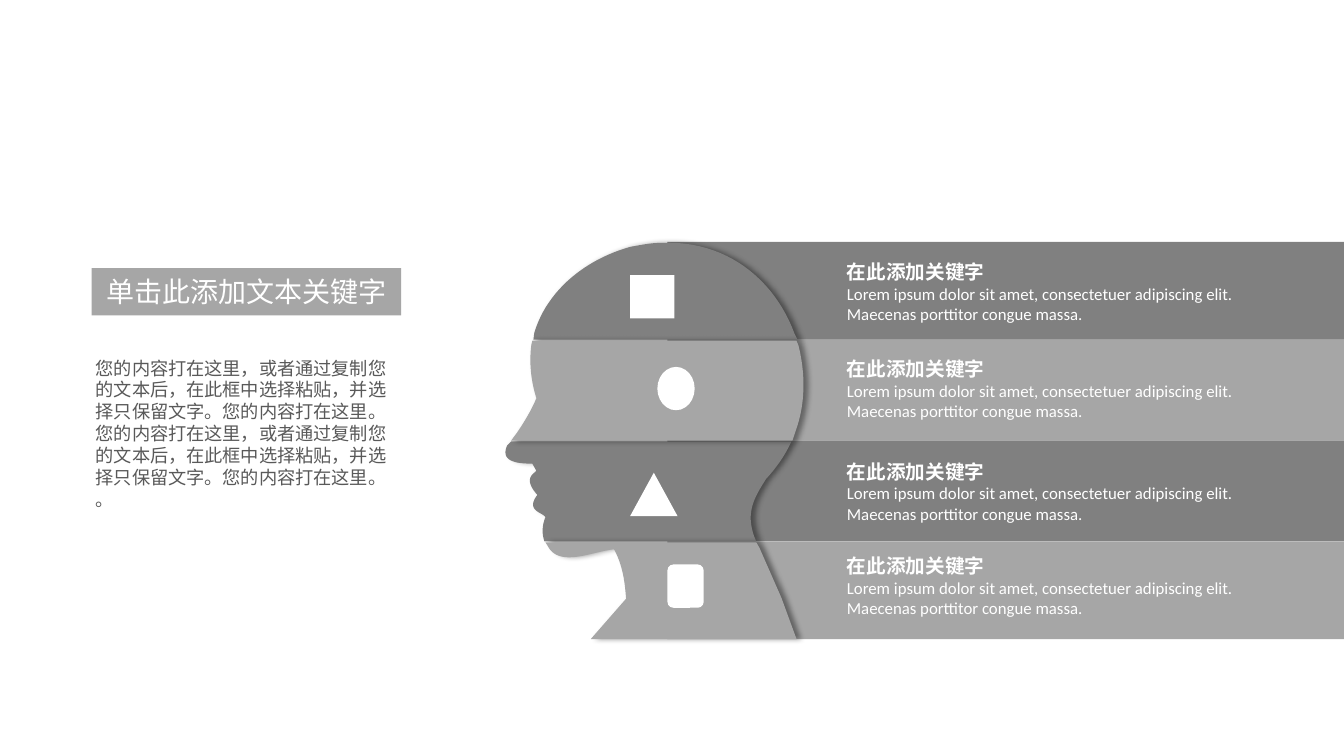
from dataclasses import dataclass

from lxml import etree
from pptx import Presentation
from pptx import util as u
from pptx.dml.color import RGBColor
from pptx.enum import shapes, text
from pptx.oxml import ns
from pptx.shapes.autoshape import Shape
from pptx.shapes.shapetree import SlideShapes
from pptx.text.text import TextFrame, _Paragraph

Point = tuple[float, float]
Box = tuple[float, float, float, float]
Preset = shapes.MSO_SHAPE


@dataclass(frozen=True)
class Theme:
    dark: str = "808080"
    light: str = "A6A6A6"
    white: str = "FFFFFF"
    body: str = "595959"
    shadow: str = "000000"
    latin: str = "Calibri"
    chinese: str = "Noto Sans CJK SC"
    title_size: int = 20
    heading_size: int = 14
    body_size: int = 13
    detail_size: int = 12


@dataclass(frozen=True)
class Level:
    """One grey band, the slice of the head in front of it, its icon and caption."""
    top: float
    height: float
    colour: str
    outline: list[tuple[float, ...]]  # pairs are corners, sextets are Bézier curves
    icon: Preset
    icon_box: Box
    caption_top: float


THEME = Theme()
SLIDE_WIDTH, SLIDE_HEIGHT = 13.33, 7.5
BAND_LEFT = 6.62
CAPTION_LEFT, CAPTION_WIDTH, CAPTION_HEIGHT = 8.27, 4.46, 0.77
CURVE_STEPS = 24
PADDING = (0.13, 0.07)

TITLE = "单击此添加文本关键字"
SENTENCES = "您的内容打在这里，或者通过复制您的文本后，在此框中选择粘贴，并选择只保留文字。您的内容打在这里。"
HEADING = "在此添加关键字"
DETAIL = ("Lorem ipsum dolor sit amet, consectetuer adipiscing elit. "
          "Maecenas porttitor congue massa.")

CROWN = Level(
    2.4, 0.97, THEME.dark,
    [(6.56, 2.41), (7.2, 2.38, 7.68, 2.77, 7.88, 3.31), (7.91, 3.37), (5.29, 3.37),
     (5.3, 3.3), (5.43, 2.87, 5.82, 2.57, 6.25, 2.45),
     (6.36, 2.43, 6.46, 2.41, 6.56, 2.41)],
    Preset.RECTANGLE, (6.25, 2.73, 0.44, 0.43), 2.51)
BROW = Level(
    3.37, 1, THEME.light,
    [(5.28, 3.38), (7.9, 3.38), (7.92, 3.43), (7.97, 3.63, 8.01, 3.95, 7.89, 4.28),
     (7.86, 4.37), (5.07, 4.37), (5.13, 4.29), (5.21, 4.17, 5.27, 4.07, 5.32, 3.95),
     (5.26, 3.76, 5.25, 3.58, 5.27, 3.42)],
    Preset.OVAL, (6.52, 3.64, 0.37, 0.43), 3.47)
MOUTH = Level(
    4.37, 1, THEME.dark,
    [(5.07, 4.38), (7.85, 4.38), (7.79, 4.51, 7.71, 4.63, 7.6, 4.75),
     (7.47, 4.95, 7.4, 5.09, 7.48, 5.32), (7.5, 5.37), (5.4, 5.37),
     (5.38, 5.31, 5.37, 5.23, 5.41, 5.13), (5.38, 5.08, 5.21, 5.07, 5.33, 4.91),
     (5.18, 4.74, 5.3, 4.7, 5.32, 4.67), (5.28, 4.6),
     (5.08, 4.6, 4.97, 4.56, 5.03, 4.42)],
    Preset.ISOSCELES_TRIANGLE, (6.25, 4.69, 0.47, 0.43), 4.49)
NECK = Level(
    5.37, 0.97, THEME.light,
    [(5.41, 5.38), (7.5, 5.38), (7.53, 5.43), (7.75, 5.93), (7.9, 6.34), (5.86, 6.34),
     (6.21, 5.94), (6.2, 5.83, 6.19, 5.63, 6.09, 5.45),
     (5.88, 5.47, 5.56, 5.63, 5.44, 5.43)],
    Preset.ROUNDED_RECTANGLE, (6.62, 5.6, 0.36, 0.43), 5.43)
LEVELS = (CROWN, BROW, MOUTH, NECK)
HEAD_BACK_TO_FRONT = (CROWN, MOUTH, BROW, NECK)


def inches(values: tuple[float, ...]) -> list[u.Length]:
    return [u.Inches(value) for value in values]


def paint(shape: Shape, colour: str) -> None:
    shape.shadow.inherit = False
    shape.fill.solid()
    shape.fill.fore_color.rgb = RGBColor.from_string(colour)
    shape.line.fill.background()


def add_block(tree: SlideShapes, preset: Preset, box: Box, colour: str) -> Shape:
    block = tree.add_shape(preset, *inches(box))
    paint(block, colour)
    return block


def flatten(outline: list[tuple[float, ...]]) -> list[Point]:
    """Turn corners and cubic curves into one run of points."""
    points: list[Point] = []
    for segment in outline:
        if len(segment) == 2:
            points.append(segment)
            continue
        start = points[-1]
        controls = (start, segment[:2], segment[2:4], segment[4:])
        for step in range(1, CURVE_STEPS + 1):
            t = step / CURVE_STEPS
            weights = ((1 - t) ** 3, 3 * t * (1 - t) ** 2, 3 * t * t * (1 - t), t ** 3)
            points.append(tuple(sum(w * c[axis] for w, c in zip(weights, controls))
                                for axis in (0, 1)))
    return points


def cast_shadow(shape: Shape) -> None:
    """Add a soft shadow to the right, at 40% opacity."""
    effects = shape._element.spPr.find(ns.qn("a:effectLst"))
    shadow = etree.SubElement(
        effects, ns.qn("a:outerShdw"), blurRad=str(u.Pt(4)), dist=str(u.Pt(3)),
        dir="0", algn="l", rotWithShape="0")
    colour = etree.SubElement(shadow, ns.qn("a:srgbClr"), val=THEME.shadow)
    etree.SubElement(colour, ns.qn("a:alpha"), val="40000")


def add_head_slice(tree: SlideShapes, level: Level) -> None:
    start, *rest = [inches(point) for point in flatten(level.outline)]
    builder = tree.build_freeform(*start)
    builder.add_line_segments(rest, close=True)
    head_slice = builder.convert_to_shape()
    paint(head_slice, level.colour)
    cast_shadow(head_slice)


def set_frame(frame: TextFrame, padding: Point, wrap: bool = True) -> None:
    frame.margin_left = frame.margin_right = u.Inches(padding[0])
    frame.margin_top = frame.margin_bottom = u.Inches(padding[1])
    frame.word_wrap = wrap
    frame.auto_size = text.MSO_AUTO_SIZE.SHAPE_TO_FIT_TEXT


def write(paragraph: _Paragraph, wording: str, size: int, colour: str,
          font: str = THEME.latin, bold: bool = False) -> None:
    paragraph.text = wording
    paragraph.font.name = font
    paragraph.font.size = u.Pt(size)
    paragraph.font.bold = bold
    paragraph.font.color.rgb = RGBColor.from_string(colour)


def add_caption(tree: SlideShapes, top: float) -> None:
    box = (CAPTION_LEFT, top, CAPTION_WIDTH, CAPTION_HEIGHT)
    frame = tree.add_textbox(*inches(box)).text_frame
    set_frame(frame, PADDING)
    write(frame.paragraphs[0], HEADING, THEME.heading_size, THEME.white, bold=True)
    write(frame.add_paragraph(), DETAIL, THEME.detail_size, THEME.white)


def add_introduction(tree: SlideShapes) -> None:
    banner = add_block(tree, Preset.RECTANGLE, (0.91, 2.66, 3.07, 0.47), THEME.light)
    set_frame(banner.text_frame, PADDING, wrap=False)
    title = banner.text_frame.paragraphs[0]
    title.alignment = text.PP_ALIGN.CENTER
    write(title, TITLE, THEME.title_size, THEME.white)

    frame = tree.add_textbox(*inches((0.95, 3.54, 2.93, 1.53))).text_frame
    set_frame(frame, (0, 0))
    for paragraph, wording in ((frame.paragraphs[0], SENTENCES * 2),
                               (frame.add_paragraph(), "。")):
        write(paragraph, wording, THEME.body_size, THEME.body, THEME.chinese)


def main() -> None:
    deck = Presentation()
    deck.slide_width, deck.slide_height = u.Inches(SLIDE_WIDTH), u.Inches(SLIDE_HEIGHT)
    tree = deck.slides.add_slide(deck.slide_layouts[6]).shapes
    for level in reversed(LEVELS):
        band = (BAND_LEFT, level.top, SLIDE_WIDTH - BAND_LEFT, level.height)
        add_block(tree, Preset.RECTANGLE, band, level.colour)
    for level in HEAD_BACK_TO_FRONT:
        add_head_slice(tree, level)
    for level in LEVELS:
        add_block(tree, level.icon, level.icon_box, THEME.white)
        add_caption(tree, level.caption_top)
    add_introduction(tree)
    deck.save("out.pptx")


if __name__ == "__main__":
    main()
